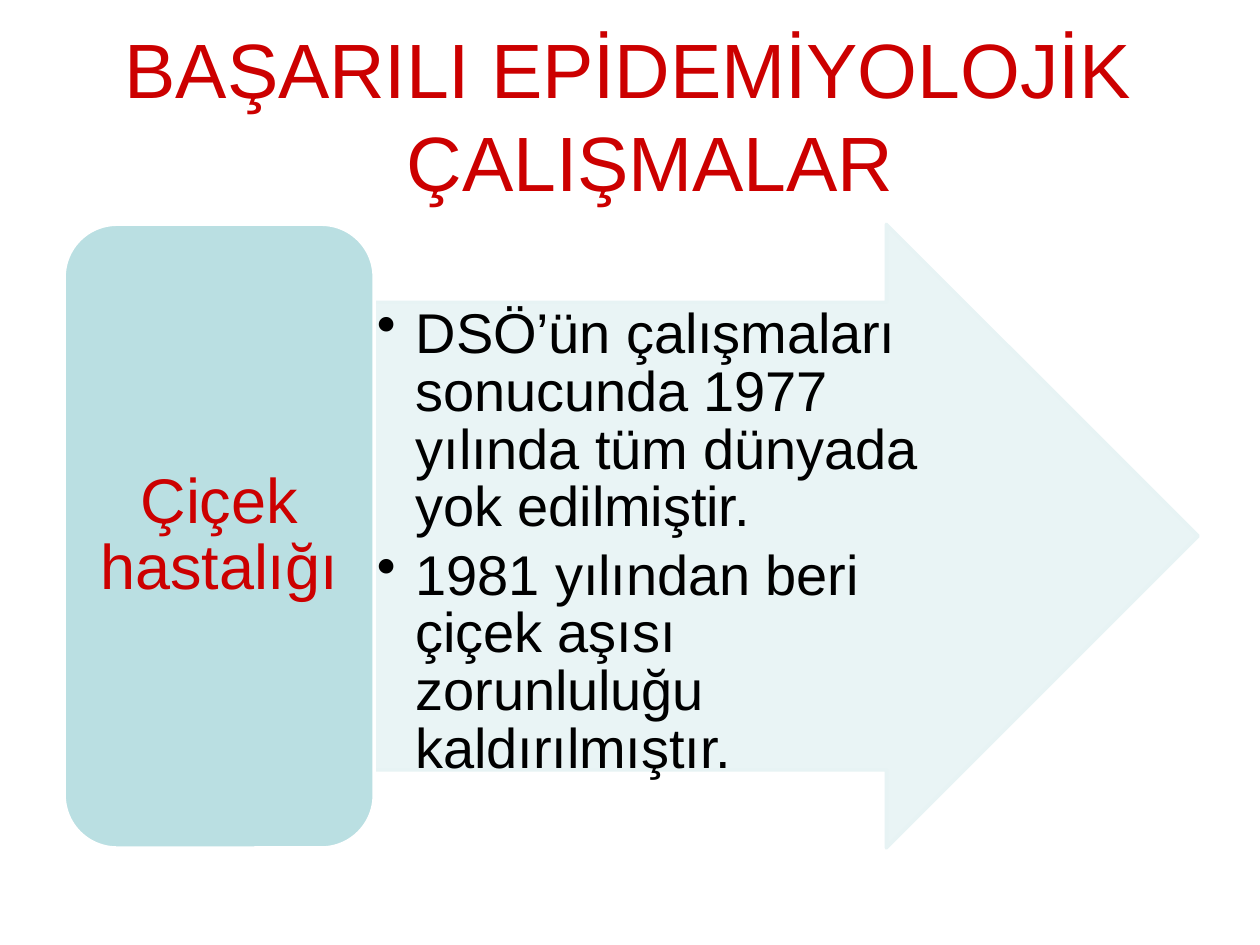
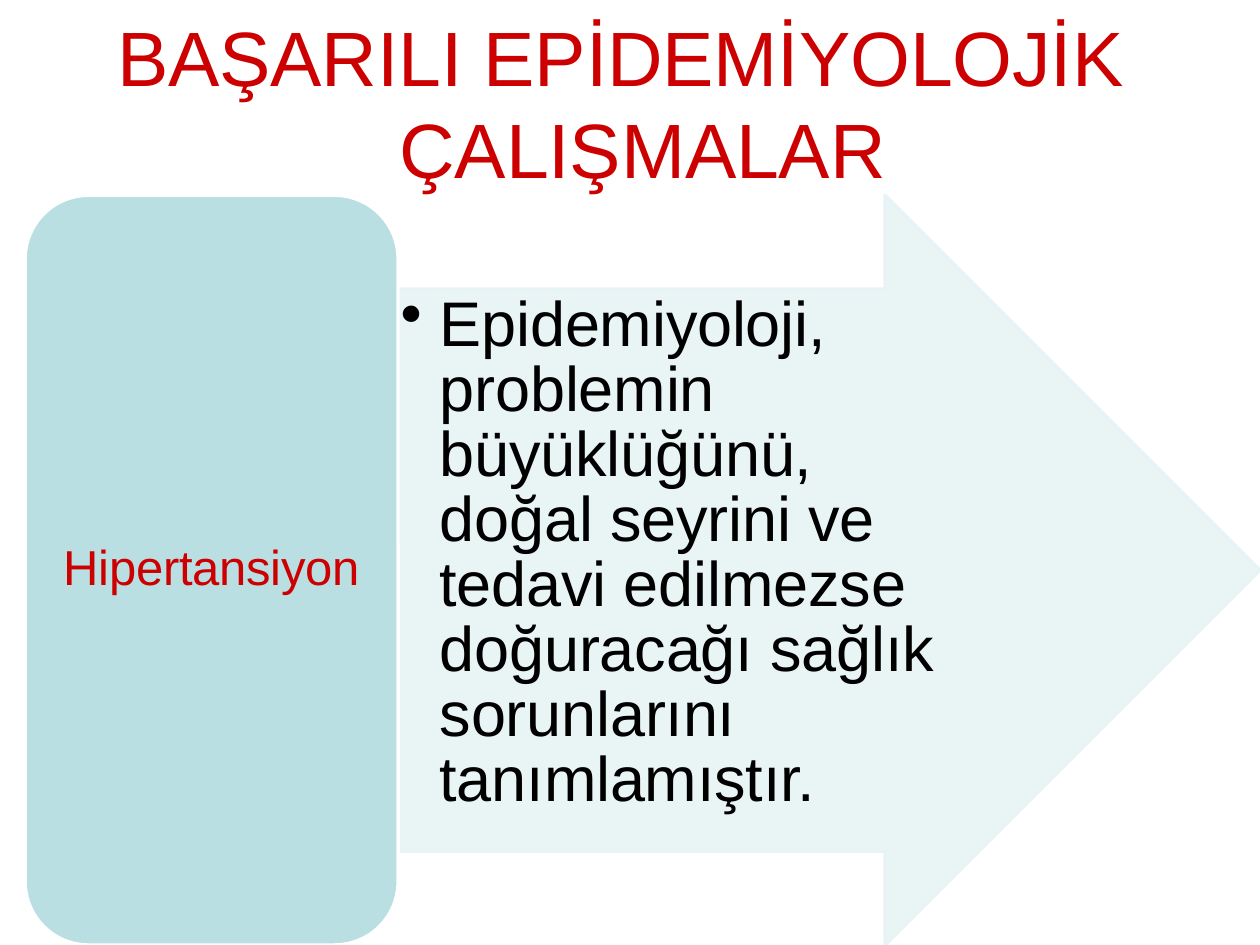
from dataclasses import dataclass

from lxml import etree
from pptx import Presentation
from pptx.dml.color import RGBColor
from pptx.enum.shapes import MSO_SHAPE
from pptx.enum.text import MSO_ANCHOR, PP_ALIGN
from pptx.oxml.ns import qn
from pptx.util import Inches, Pt

ARROW = MSO_SHAPE.RIGHT_ARROW
ROUNDED = MSO_SHAPE.ROUNDED_RECTANGLE
MIDDLE = MSO_ANCHOR.MIDDLE
LEFT = PP_ALIGN.LEFT
CENTER = PP_ALIGN.CENTER

RED = RGBColor(0xCC, 0x00, 0x00)
BLACK = RGBColor(0x00, 0x00, 0x00)
WHITE = RGBColor(0xFF, 0xFF, 0xFF)
TEAL = RGBColor(0xBA, 0xDF, 0xE2)
PALE_TEAL = RGBColor(0xE7, 0xF3, 0xF4)

FONT = "Arial"
SLIDE_WIDTH = Inches(10)
SLIDE_HEIGHT = Inches(7.5)
COLUMN = SLIDE_WIDTH / 100
ROW = SLIDE_HEIGHT / 75
OUTLINE = Pt(1.92)
SHAFT_SHARE = 0.75
HEAD_SHARE = 0.5
CORNER_SHARE = 0.17
BULLET_INDENT = 3.1
TITLE = "BAŞARILI EPİDEMİYOLOJİK ÇALIŞMALAR"


@dataclass
class Box:
    left: float
    top: float
    width: float
    height: float

    def place(self):
        return (round(self.left * COLUMN), round(self.top * ROW),
                round(self.width * COLUMN), round(self.height * ROW))


def clear_margins(text_frame):
    text_frame.word_wrap = True
    text_frame.margin_left = text_frame.margin_right = 0
    text_frame.margin_top = text_frame.margin_bottom = 0


def format_paragraph(paragraph, size, color, alignment=LEFT):
    paragraph.alignment = alignment
    for run in paragraph.runs:
        run.font.name = FONT
        run.font.size = Pt(size)
        run.font.color.rgb = color
        run._r.get_or_add_rPr().set("spc", "-10")


def hang(paragraph, margin, indent):
    properties = paragraph._p.get_or_add_pPr()
    properties.set("marL", str(round(margin * COLUMN)))
    properties.set("indent", str(round(-indent * COLUMN)))
    return properties


def add_text_box(slide, box):
    text_frame = slide.shapes.add_textbox(*box.place()).text_frame
    clear_margins(text_frame)
    return text_frame


def add_preset(slide, kind, box, fill, line):
    shape = slide.shapes.add_shape(kind, *box.place())
    shape.shadow.inherit = False
    shape.fill.solid()
    shape.fill.fore_color.rgb = fill
    shape.line.color.rgb = line
    shape.line.width = OUTLINE
    return shape


def add_title(slide, box):
    text_frame = add_text_box(slide, box)
    text_frame.margin_top = Pt(1)
    text_frame.text = TITLE
    paragraph = text_frame.paragraphs[0]
    paragraph.space_before = Pt(0.9)
    hang(paragraph, 22.5, 22.4)
    format_paragraph(paragraph, 44, RED)


def add_arrow(slide, box):
    arrow = add_preset(slide, ARROW, box, PALE_TEAL, PALE_TEAL)
    arrow.adjustments[0] = SHAFT_SHARE
    arrow.adjustments[1] = HEAD_SHARE
    color = arrow.fill._xPr.find(qn("a:solidFill"))[0]
    etree.SubElement(color, qn("a:alpha")).set("val", "90000")


def add_findings(slide, arrow_box, findings, size):
    shaft_height = arrow_box.height * SHAFT_SHARE
    shaft_top = arrow_box.top + (arrow_box.height - shaft_height) / 2
    box = Box(arrow_box.left + 0.2, shaft_top - 0.6, 44.5, shaft_height)
    text_frame = add_text_box(slide, box)
    text_frame.margin_top = Inches(0.1)
    text_frame.text = "\n".join(findings)
    for paragraph in text_frame.paragraphs:
        paragraph.line_spacing = 0.86
        paragraph.space_before = Pt(6)
        properties = hang(paragraph, BULLET_INDENT, BULLET_INDENT)
        etree.SubElement(properties, qn("a:buChar")).set("char", "•")
        format_paragraph(paragraph, size, BLACK)


def add_topic(slide, box, topic, size):
    panel = add_preset(slide, ROUNDED, box, TEAL, WHITE)
    panel.adjustments[0] = CORNER_SHARE
    text_frame = panel.text_frame
    clear_margins(text_frame)
    text_frame.vertical_anchor = MIDDLE
    text_frame.text = topic
    paragraph = text_frame.paragraphs[0]
    paragraph.line_spacing = Pt(size * 1.04)
    format_paragraph(paragraph, size, RED, CENTER)


def add_study_slide(presentation, title_box, diagram, topic_width,
                    topic, topic_size, findings, finding_size):
    slide = presentation.slides.add_slide(presentation.slide_layouts[6])
    topic_box = Box(diagram.left, diagram.top, topic_width, diagram.height)
    arrow_box = Box(diagram.left + topic_width, diagram.top,
                    diagram.width - topic_width, diagram.height)
    add_title(slide, title_box)
    add_arrow(slide, arrow_box)
    add_findings(slide, arrow_box, findings, finding_size)
    add_topic(slide, topic_box, topic, topic_size)


def main():
    presentation = Presentation()
    presentation.slide_width = SLIDE_WIDTH
    presentation.slide_height = SLIDE_HEIGHT
    add_study_slide(
        presentation, Box(9.8, 1.6, 81.7, 14.9), Box(5.1, 17.8, 90, 49.5), 24.6,
        "Çiçek hastalığı", 36,
        ["DSÖ’ün çalışmaları sonucunda 1977 yılında tüm dünyada yok edilmiştir.",
         "1981 yılından beri çiçek aşısı zorunluluğu kaldırılmıştır."], 32)
    add_study_slide(
        presentation, Box(9.2, 0.6, 81.7, 14.9), Box(2, 15.5, 98, 59.5), 29.6,
        "Hipertansiyon", 28,
        ["Epidemiyoloji, problemin büyüklüğünü, doğal seyrini ve tedavi edilmezse "
         "doğuracağı sağlık sorunlarını tanımlamıştır."], 36)
    presentation.save("out.pptx")


if __name__ == "__main__":
    main()
